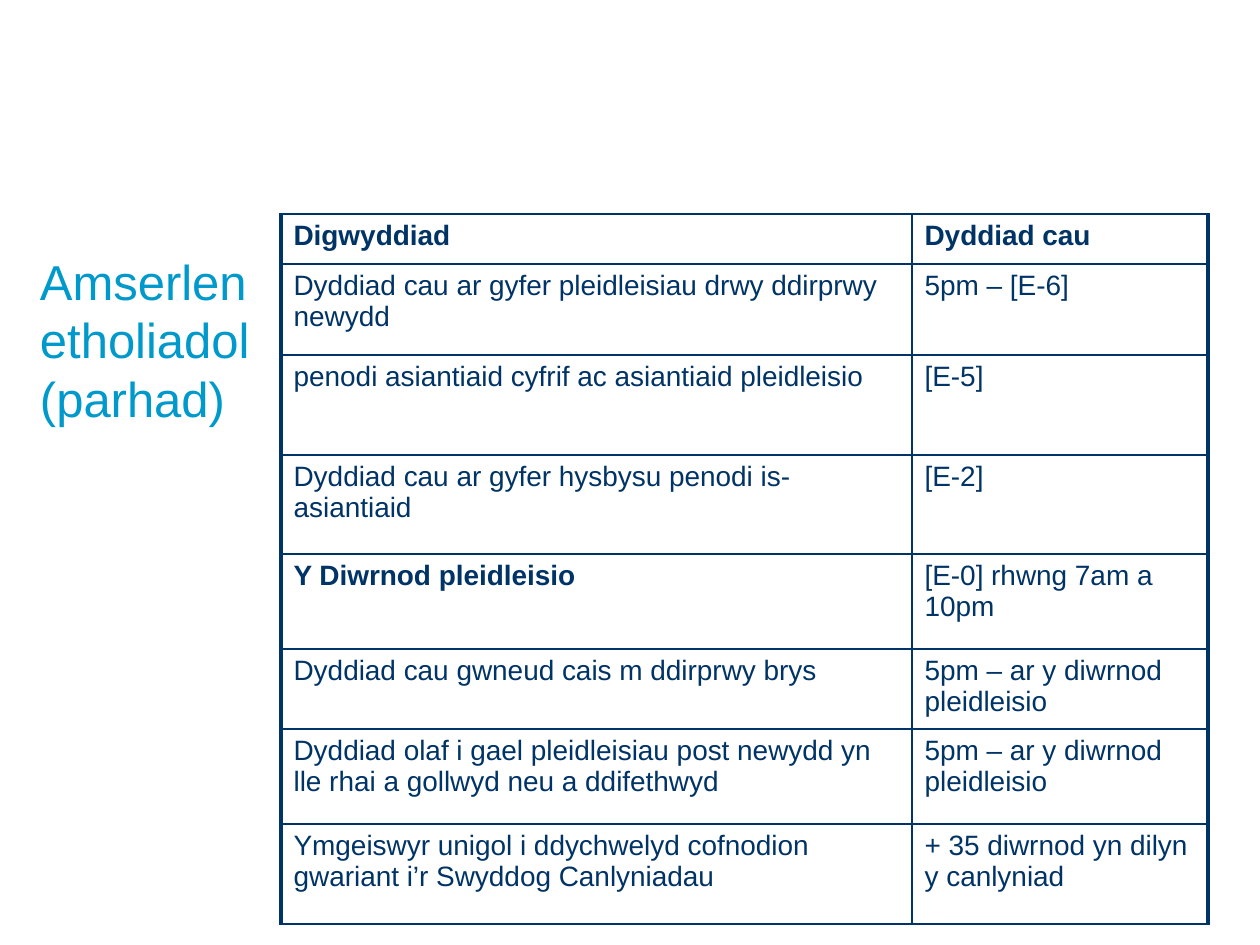
from lxml.etree import SubElement
from pptx import Presentation
from pptx.dml.color import RGBColor
from pptx.enum.text import MSO_ANCHOR
from pptx.oxml.ns import qn
from pptx.util import Pt

TITLE = "Amserlen etholiadol (parhad)"
HEAD = ("Digwyddiad", "Dyddiad cau")
POLL = "Y Diwrnod pleidleisio"
ROWS = [
    (50, HEAD),
    (91, ("Dyddiad cau ar gyfer pleidleisiau drwy ddirprwy newydd",
          "5pm – [E-6]")),
    (100, ("penodi asiantiaid cyfrif ac asiantiaid pleidleisio", "[E-5]")),
    (99, ("Dyddiad cau ar gyfer hysbysu penodi is-asiantiaid", "[E-2]")),
    (95, (POLL, "[E-0] rhwng 7am a 10pm")),
    (80, ("Dyddiad cau gwneud cais m ddirprwy brys",
          "5pm – ar y diwrnod pleidleisio")),
    (95, ("Dyddiad olaf i gael pleidleisiau post newydd yn lle rhai "
          "a gollwyd neu a ddifethwyd", "5pm – ar y diwrnod pleidleisio")),
    (100, ("Ymgeiswyr unigol i ddychwelyd cofnodion gwariant i’r Swyddog "
           "Canlyniadau", "+ 35 diwrnod yn dilyn y canlyniad")),
]
BOLD = {*HEAD, POLL}
COLS = (631, 296)
THEME = {
    "font": "Arial",
    "title": {"size": 28, "color": "0099CC"},
    "cell": {"size": 16, "color": "003366"},
    "rule": {"color": "003366", "thin": 1, "thick": 2.25},
}


def px(n):
    return round(n * 914400 / 126)


def write(frame, text, style, bold=False):
    para = frame.paragraphs[0]
    run = para.add_run()
    run.text = text
    look = {"name": THEME["font"], "size": Pt(style["size"]), "bold": bold}
    for key, val in look.items():
        setattr(run.font, key, val)
    run.font.color.rgb = RGBColor.from_string(style["color"])


def edge(cell, side, width):
    line = SubElement(cell._tc.get_or_add_tcPr(), qn(f"a:ln{side}"),
                      w=str(Pt(width)))
    fill = SubElement(line, qn("a:solidFill"))
    SubElement(fill, qn("a:srgbClr"), val=THEME["rule"]["color"])


def add_title(slide):
    box = slide.shapes.add_textbox(px(40), px(251), px(347), px(588))
    frame = box.text_frame
    form = {"word_wrap": True, "margin_left": 0, "margin_right": 0,
            "margin_top": 0, "margin_bottom": 0,
            "vertical_anchor": MSO_ANCHOR.TOP}
    for key, val in form.items():
        setattr(frame, key, val)
    write(frame, TITLE, THEME["title"])


def add_dates(slide):
    tall = sum(high for high, _ in ROWS)
    grid = slide.shapes.add_table(len(ROWS), len(COLS), px(281), px(214),
                                  px(sum(COLS)), px(tall)).table
    grid.first_row = grid.horz_banding = False
    for col, wide in zip(grid.columns, COLS):
        col.width = px(wide)
    rule = THEME["rule"]
    for r, (high, texts) in enumerate(ROWS):
        grid.rows[r].height = px(high)
        for c, text in enumerate(texts):
            cell = grid.cell(r, c)
            write(cell.text_frame, text, THEME["cell"], text in BOLD)
            outer = "LR"[c]
            for side in "LRTB":
                edge(cell, side, rule["thick" if side == outer else "thin"])
            cell.fill.background()


def main():
    deck = Presentation()
    deck.slide_width, deck.slide_height = px(1260), px(945)
    slide = deck.slides.add_slide(deck.slide_layouts[6])
    add_title(slide)
    add_dates(slide)
    deck.save("out.pptx")


if __name__ == "__main__":
    main()
